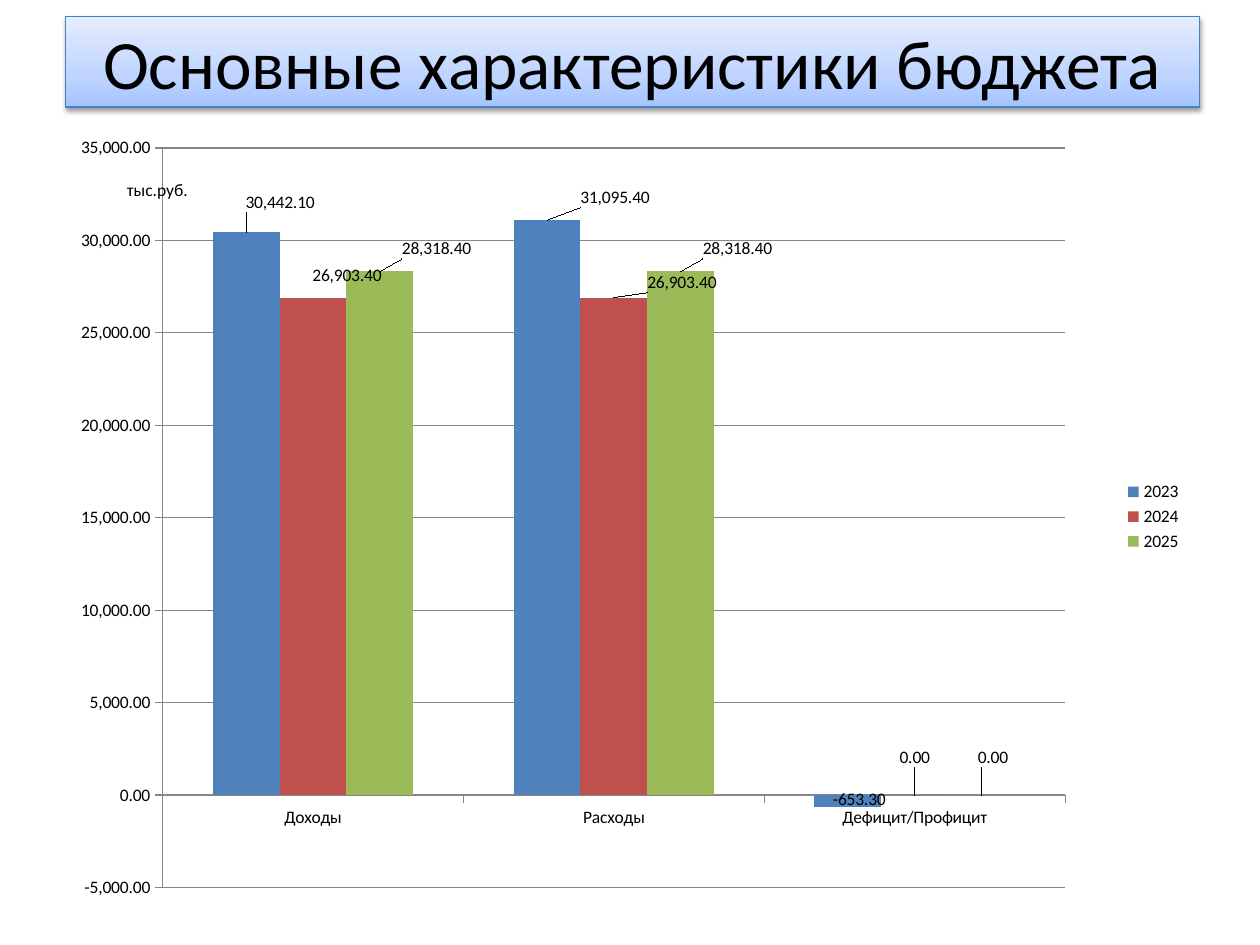
from copy import deepcopy

from lxml import etree
from pptx import Presentation
from pptx.chart.data import CategoryChartData
from pptx.dml.color import RGBColor
from pptx.enum.chart import (XL_CHART_TYPE, XL_LABEL_POSITION,
                             XL_LEGEND_POSITION, XL_TICK_MARK)
from pptx.enum.text import MSO_ANCHOR, MSO_AUTO_SIZE, PP_ALIGN
from pptx.oxml import parse_xml
from pptx.oxml.ns import nsdecls, qn
from pptx.util import Cm, Pt

COLUMNS = XL_CHART_TYPE.COLUMN_CLUSTERED
OUTSIDE_END = XL_LABEL_POSITION.OUTSIDE_END
RIGHT = XL_LEGEND_POSITION.RIGHT
TICK_OUT = XL_TICK_MARK.OUTSIDE
TICK_NONE = XL_TICK_MARK.NONE
CENTER = PP_ALIGN.CENTER
MIDDLE = MSO_ANCHOR.MIDDLE
GROW = MSO_AUTO_SIZE.SHAPE_TO_FIT_TEXT

BLACK = RGBColor(0, 0, 0)
GRAY = RGBColor(0x86, 0x86, 0x86)
TITLE_LINE = RGBColor(0x4B, 0x7E, 0xBC)
TITLE_STOPS = [
    (0, RGBColor(0xA4, 0xC4, 0xFF)),
    (0.35, RGBColor(0xBF, 0xD4, 0xFF)),
    (1, RGBColor(0xE6, 0xEE, 0xFF)),
]
FONT = "Calibri"
NUMBER_FORMAT = "#,##0.00"

TITLE = "Основные характеристики бюджета"
UNIT = "тыс.руб."
CATEGORIES = ["Доходы", "Расходы", "Дефицит/Профицит"]
# year, colour, values, label shifts as shares of the chart, leader lines
SERIES = [
    ("2023", RGBColor(0x4F, 0x81, 0xBD), (30442.1, 31095.4, -653.3),
     ((0.03, -0.02), (0.06, -0.01), (0.01, -0.03)), 1),
    ("2024", RGBColor(0xC0, 0x50, 0x4D), (26903.4, 26903.4, 0),
     ((0.03, -0.01), (0.06, 0), (0, -0.03)), 0),
    ("2025", RGBColor(0x9B, 0xBB, 0x59), (28318.4, 28318.4, 0),
     ((0.05, -0.01), (0.05, -0.01), (0.01, -0.03)), 0),
]
PLOT_AREA = {"x": 0.09, "y": 0.017, "w": 0.796, "h": 0.969}


def place(shape, left, top, width, height):
    shape.left, shape.top = Cm(left), Cm(top)
    shape.width, shape.height = Cm(width), Cm(height)


def write(box, text, size):
    span = box.text_frame.paragraphs[0].add_run()
    span.text = text
    span.font.name = FONT
    span.font.size = Pt(size)
    span.font.color.rgb = BLACK


def manual_layout(parts):
    """Return a c:layout element; parts maps child names to values in order."""
    layout = parse_xml(f"<c:layout {nsdecls('c')}><c:manualLayout/></c:layout>")
    for name, value in parts.items():
        etree.SubElement(layout[0], qn(f"c:{name}")).set("val", str(value))
    return layout


def add_title(page):
    title = page.shapes.title
    place(title, 1.32, 0.33, 22.86, 1.83)
    title.fill.gradient()
    title.fill.gradient_angle = 90
    stops = title.fill.gradient_stops
    stop_list = title._element.spPr.find(".//" + qn("a:gsLst"))
    stop_list.append(deepcopy(stop_list[0]))
    for stop, (position, color) in zip(title.fill.gradient_stops, TITLE_STOPS):
        stop.position = position
        stop.color.rgb = color
    title.line.color.rgb = TITLE_LINE
    title.line.width = Pt(0.75)
    title._element.spPr.append(parse_xml(
        f"<a:effectLst {nsdecls('a')}>"
        f'<a:outerShdw blurRad="{Pt(3.1)}" dist="{Pt(1.6)}" dir="5400000" rotWithShape="0">'
        '<a:srgbClr val="000000"><a:alpha val="38000"/></a:srgbClr>'
        "</a:outerShdw></a:effectLst>"))
    title.text_frame.vertical_anchor = MIDDLE
    title.text_frame.paragraphs[0].alignment = CENTER
    write(title, TITLE, 39.6)


def add_labels(series, shifts, leader_lines):
    labels = series.data_labels
    labels.show_value = True
    labels.number_format = NUMBER_FORMAT
    labels.number_format_is_linked = False
    for index, (x, y) in enumerate(shifts):
        label = series.points[index].data_label
        label.position = OUTSIDE_END
        element = labels._element.findall(qn("c:dLbl"))[index]
        element.insert(1, manual_layout({"x": x, "y": y}))
    labels._element.append(parse_xml(
        f"<c:extLst {nsdecls('c')}>"
        '<c:ext uri="{CE6537A1-D6FC-4f65-9D91-7224C49458BB}" '
        'xmlns:c15="http://schemas.microsoft.com/office/drawing/2012/chart">'
        f'<c15:showLeaderLines val="{leader_lines}"/></c:ext></c:extLst>'))


def add_budget_chart(page):
    data = CategoryChartData(number_format=NUMBER_FORMAT)
    data.categories = CATEGORIES
    for year, _, values, _, _ in SERIES:
        data.add_series(year, values)
    chart = page.shapes.add_chart(
        COLUMNS, Cm(1.22), Cm(2.72), Cm(22.86), Cm(15.39), data).chart
    chart.has_title = False
    chart.font.name = FONT
    chart.font.size = Pt(10)
    chart.font.color.rgb = BLACK
    chart.has_legend = True
    chart.legend.position = RIGHT
    chart.legend.include_in_layout = False

    plot = chart.plots[0]
    plot.gap_width = 150
    plot.vary_by_categories = False
    for series, (_, color, _, shifts, leader_lines) in zip(plot.series, SERIES):
        series.format.fill.solid()
        series.format.fill.fore_color.rgb = color
        add_labels(series, shifts, leader_lines)

    for axis in (chart.category_axis, chart.value_axis):
        axis.major_tick_mark = TICK_OUT
        axis.minor_tick_mark = TICK_NONE
        axis.format.line.color.rgb = GRAY
    values = chart.value_axis
    values.minimum_scale, values.maximum_scale = -5000, 35000
    values.major_unit = 5000
    values.has_major_gridlines = True
    values.major_gridlines.format.line.color.rgb = GRAY
    values.tick_labels.number_format = NUMBER_FORMAT
    values.tick_labels.number_format_is_linked = False

    area = chart._chartSpace.find(".//" + qn("c:plotArea"))
    for layout in area.findall(qn("c:layout")):
        area.remove(layout)
    modes = {"layoutTarget": "inner", "xMode": "edge", "yMode": "edge"}
    area.insert(0, manual_layout(modes | PLOT_AREA))


def add_unit(page):
    box = page.shapes.add_textbox(Cm(2.31), Cm(3.48), Cm(1.8), Cm(0.69))
    box.text_frame.word_wrap = False
    box.text_frame.auto_size = GROW
    write(box, UNIT, 10)


def main():
    deck = Presentation()
    deck.slide_width, deck.slide_height = Cm(25.4), Cm(19.05)
    page = deck.slides.add_slide(deck.slide_layouts[5])
    add_title(page)
    add_budget_chart(page)
    add_unit(page)
    deck.save("out.pptx")


if __name__ == "__main__":
    main()
